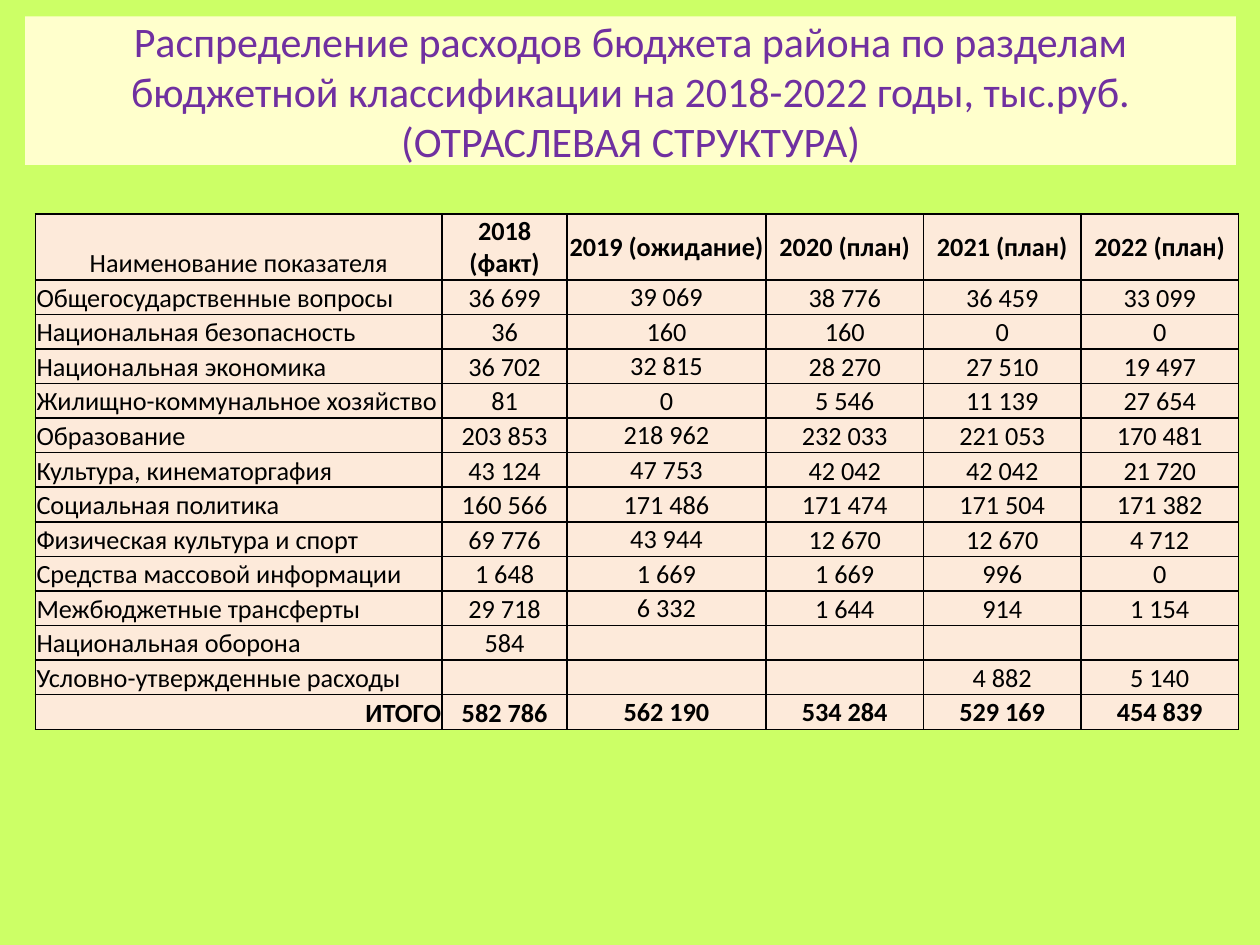
import pptx
import pptx.util
import pptx.dml.color
import pptx.enum.text
import pptx.oxml.ns
import lxml.etree

Inches, Pt = pptx.util.Inches, pptx.util.Pt
RGBColor = pptx.dml.color.RGBColor
ALIGN = pptx.enum.text.PP_ALIGN
ANCHOR = pptx.enum.text.MSO_ANCHOR
qn = pptx.oxml.ns.qn

LIME = RGBColor(0xCC, 0xFF, 0x66)
CREAM = RGBColor(0xFF, 0xFF, 0xCC)
PURPLE = RGBColor(0x70, 0x30, 0xA0)
PEACH = RGBColor(0xFD, 0xEA, 0xDA)
BLACK = RGBColor(0, 0, 0)
FONT = "Calibri"

TITLE = ("Распределение расходов бюджета района по разделам бюджетной "
         "классификации на 2018-2022 годы, тыс.руб.\v(ОТРАСЛЕВАЯ СТРУКТУРА)")
ROWS = [
    ("Наименование показателя", "2018 (факт)", "2019 (ожидание)", "2020 (план)", "2021 (план)", "2022 (план)"),
    ("Общегосударственные вопросы", "36 699", "39 069", "38 776", "36 459", "33 099"),
    ("Национальная безопасность", "36", "160", "160", "0", "0"),
    ("Национальная экономика", "36 702", "32 815", "28 270", "27 510", "19 497"),
    ("Жилищно-коммунальное хозяйство", "81", "0", "5 546", "11 139", "27 654"),
    ("Образование", "203 853", "218 962", "232 033", "221 053", "170 481"),
    ("Культура, кинематоргафия", "43 124", "47 753", "42 042", "42 042", "21 720"),
    ("Социальная политика", "160 566", "171 486", "171 474", "171 504", "171 382"),
    ("Физическая культура и спорт", "69 776", "43 944", "12 670", "12 670", "4 712"),
    ("Средства массовой информации", "1 648", "1 669", "1 669", "996", "0"),
    ("Межбюджетные трансферты", "29 718", "6 332", "1 644", "914", "1 154"),
    ("Национальная оборона", "584", "", "", "", ""),
    ("Условно-утвержденные расходы", "", "", "", "4 882", "5 140"),
    ("ИТОГО", "582 786", "562 190", "534 284", "529 169", "454 839"),
]
COLUMN_WIDTHS = (3.23, 0.99, 1.58, 1.25, 1.25, 1.25)
TABLE_LEFT, TABLE_TOP, TABLE_HEIGHT = 0.28, 1.7, 4.09
HEADER_HEIGHT = 0.52
LAST = len(ROWS) - 1


def style_font(font, size, color, bold=False):
    font.name, font.size, font.bold = FONT, Pt(size), bold
    font.color.rgb = color


def add_borders(cell):
    properties = cell._tc.get_or_add_tcPr()
    for index, side in enumerate(("lnL", "lnR", "lnT", "lnB")):
        line = lxml.etree.Element(qn(f"a:{side}"), w=str(Pt(1)))
        fill = lxml.etree.SubElement(line, qn("a:solidFill"))
        lxml.etree.SubElement(fill, qn("a:srgbClr"), val=str(BLACK))
        properties.insert(index, line)


def cell_alignment(row, column):
    if column or row == 0:
        return ALIGN.CENTER
    return ALIGN.RIGHT if row == LAST else ALIGN.LEFT


def cell_anchor(row, column):
    middle = column == 2 or (row == 0 and column) or (row == LAST and column > 2)
    return ANCHOR.MIDDLE if middle else ANCHOR.BOTTOM


def fill_cell(cell, text, row, column):
    cell.fill.solid()
    cell.fill.fore_color.rgb = PEACH
    add_borders(cell)
    cell.margin_left = cell.margin_right = cell.margin_top = Inches(0.01)
    cell.margin_bottom = 0
    cell.vertical_anchor = cell_anchor(row, column)
    paragraph = cell.text_frame.paragraphs[0]
    paragraph.alignment = cell_alignment(row, column)
    bold = row == LAST or (row == 0 and column > 0)
    style_font(paragraph.font, 15, BLACK, bold)
    if text:
        paragraph.text = text
    else:
        lxml.etree.SubElement(paragraph._p, qn("a:endParaRPr"), sz="1500")


def add_title(slide):
    title = slide.shapes.title
    title.left, title.top, title.width, title.height = map(Inches, (0.2, 0.13, 9.61, 1.18))
    title.fill.solid()
    title.fill.fore_color.rgb = CREAM
    title.text_frame.text = TITLE
    title.text_frame.word_wrap = True
    title.text_frame.vertical_anchor = ANCHOR.MIDDLE
    paragraph = title.text_frame.paragraphs[0]
    paragraph.alignment = ALIGN.CENTER
    style_font(paragraph.font, 24, PURPLE)


def add_budget_table(slide):
    frame = slide.shapes.add_table(
        len(ROWS), len(COLUMN_WIDTHS), Inches(TABLE_LEFT), Inches(TABLE_TOP),
        Inches(sum(COLUMN_WIDTHS)), Inches(TABLE_HEIGHT))
    table = frame.table
    table.first_row = table.horz_banding = False
    for column, width in zip(table.columns, COLUMN_WIDTHS):
        column.width = Inches(width)
    for index, row in enumerate(table.rows):
        row.height = Inches((TABLE_HEIGHT - HEADER_HEIGHT) / LAST if index else HEADER_HEIGHT)
    for row, texts in enumerate(ROWS):
        for column, text in enumerate(texts):
            fill_cell(table.cell(row, column), text, row, column)


def main():
    presentation = pptx.Presentation()
    presentation.slide_width, presentation.slide_height = Inches(10), Inches(7.5)
    slide = presentation.slides.add_slide(presentation.slide_layouts[5])
    slide.background.fill.solid()
    slide.background.fill.fore_color.rgb = LIME
    add_title(slide)
    add_budget_table(slide)
    presentation.save("out.pptx")


if __name__ == "__main__":
    main()
